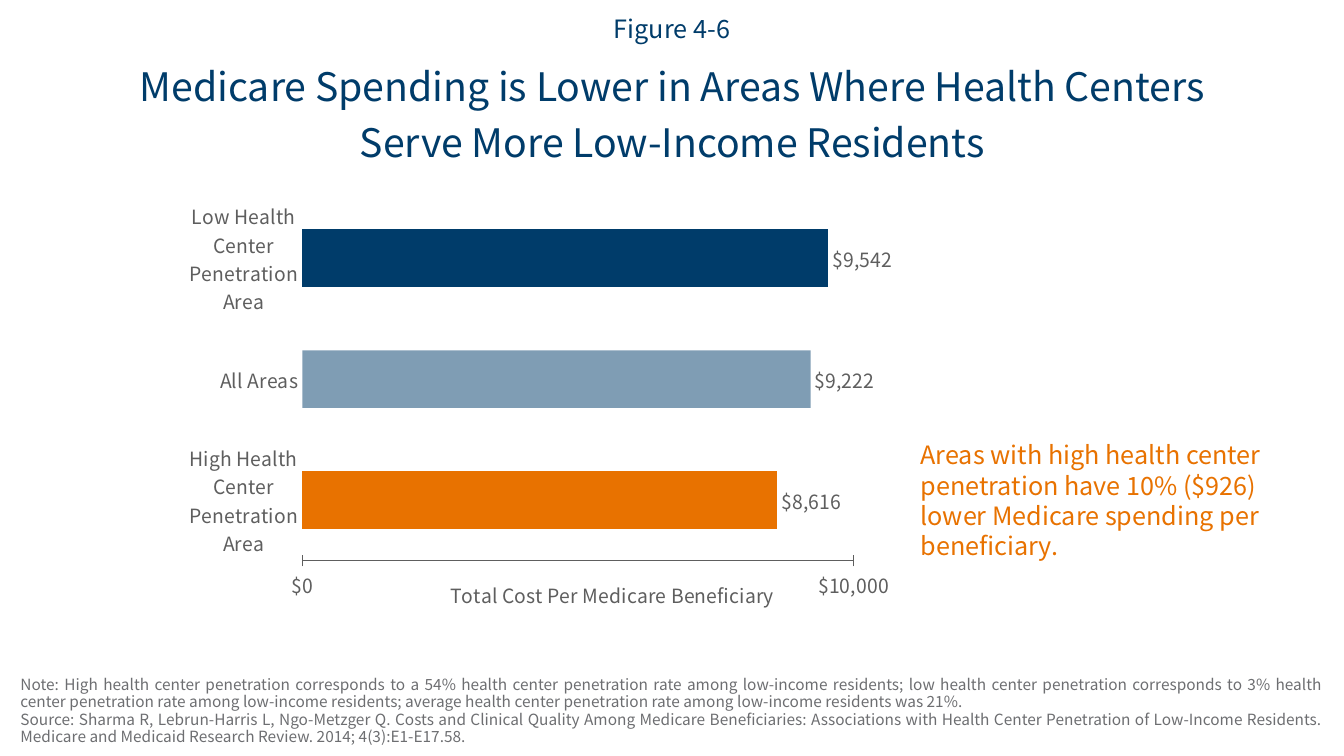
from lxml import etree
from pptx import Presentation
from pptx import util as u
from pptx.chart import data as cd
from pptx.dml import color as col
from pptx.enum import chart as ec, text as et
from pptx.oxml import ns

FACE = "Noto Sans CJK JP"
NAVY, ORANGE, GREY, NOTE = "003C6A", "E87200", "5E5E5E", "6D6E71"
MONEY = '"$"#,##0'
AREAS = [
    ("High Health Center\nPenetration Area", 8616, ORANGE),
    ("All Areas", 9222, NAVY),
    ("Low Health Center\nPenetration Area", 9542, NAVY),
]
TITLE = ["Medicare Spending is Lower in Areas Where Health Centers",
         "Serve More Low-Income Residents"]
CALL = ["Areas with high health center penetration have 10% ($926) "
        "lower Medicare spending per beneficiary."]
NOTES = [
    "Note: High health center penetration corresponds to a 54% health center "
    "penetration rate among low-income residents; low health center penetration "
    "corresponds to 3% health center penetration rate among low-income residents; "
    "average health center penetration rate among low-income residents was 21%.",
    "Source: Sharma R, Lebrun-Harris L, Ngo-Metzger Q. Costs and Clinical Quality "
    "Among Medicare Beneficiaries: Associations with Health Center Penetration of "
    "Low-Income Residents. Medicare and Medicaid Research Review. 2014; 4(3):E1-E17.58.",
]


def rgb(code):
    """Turn a hex string into a colour."""
    return col.RGBColor.from_string(code)


def put(obj, **vals):
    """Set each given attribute on an object."""
    for name, val in vals.items():
        setattr(obj, name, val)


def style(font, size, tint):
    """Give a font the slide's face with a size and colour."""
    put(font, name=FACE, size=u.Pt(size), bold=False)
    font.color.rgb = rgb(tint)


def write(slide, box, lines, size, tint, align="LEFT", anchor="TOP", lead=0.9, gap=0):
    """Place a text box with one paragraph for each line."""
    frame = slide.shapes.add_textbox(*map(u.Pt, box)).text_frame
    put(frame, word_wrap=True, vertical_anchor=getattr(et.MSO_ANCHOR, anchor))
    for i, line in enumerate(lines):
        para = frame.add_paragraph() if i else frame.paragraphs[0]
        put(para, alignment=getattr(et.PP_ALIGN, align),
            line_spacing=lead, space_before=u.Pt(gap))
        run = para.add_run()
        run.text = line
        style(run.font, size, tint)


def layout(node, before, **vals):
    """Pin a chart part at fractions of the chart area."""
    for old in node.findall(ns.qn("c:layout")):
        node.remove(old)
    lay = etree.Element(ns.qn("c:layout"))
    man = etree.SubElement(lay, ns.qn("c:manualLayout"))
    for tag, val in vals.items():
        etree.SubElement(man, ns.qn("c:" + tag)).set("val", str(val))
    node.insert(before, lay)


def costs(slide, box):
    """Draw the bar chart of cost by area."""
    data = cd.CategoryChartData(number_format=MONEY)
    data.categories = [area[0] for area in AREAS]
    data.add_series("Series 1", [area[1] for area in AREAS])
    chart = slide.shapes.add_chart(
        ec.XL_CHART_TYPE.BAR_CLUSTERED, *map(u.Pt, box), data).chart
    put(chart, has_legend=False, has_title=False)
    style(chart.font, 14, GREY)
    plot = chart.plots[0]
    put(plot, gap_width=110, vary_by_categories=False, has_data_labels=True)
    put(plot.data_labels, show_value=True, number_format=MONEY,
        number_format_is_linked=False, position=ec.XL_LABEL_POSITION.OUTSIDE_END)
    style(plot.data_labels.font, 14, GREY)
    bars = plot.series[0]
    for i, (_, _, tint) in enumerate(AREAS):
        fill = bars.points[i].format.fill
        fill.solid()
        fill.fore_color.rgb = rgb(tint)
    pale = bars.points[1].format.fill.fore_color._xFill.find(ns.qn("a:srgbClr"))
    etree.SubElement(pale, ns.qn("a:alpha")).set("val", "50000")
    marks = ec.XL_TICK_MARK
    cats, cost = chart.category_axis, chart.value_axis
    for axis, tick in ((cats, marks.NONE), (cost, marks.CROSS)):
        put(axis, major_tick_mark=tick, minor_tick_mark=marks.NONE,
            has_major_gridlines=False)
        style(axis.tick_labels.font, 14, GREY)
    cats.format.line.fill.background()
    put(cost, minimum_scale=0, maximum_scale=10000, major_unit=10000)
    put(cost.tick_labels, number_format=MONEY, number_format_is_linked=False)
    cost.format.line.width = u.Pt(0.75)
    cost.format.line.color.rgb = rgb(GREY)
    title = cost.axis_title
    title.text_frame.text = "Total Cost Per Medicare Beneficiary"
    style(title.text_frame.paragraphs[0].runs[0].font, 14, GREY)
    layout(title._element, 1, xMode="edge", yMode="edge", x=0.39, y=0.875)
    layout(chart._chartSpace.chart.plotArea, 0, layoutTarget="inner", xMode="edge",
           yMode="edge", x=0.188, y=0.034, w=0.772, h=0.811)


def main():
    """Build the slide and save it."""
    deck = Presentation()
    put(deck, slide_width=u.Pt(960), slide_height=u.Pt(540))
    slide = deck.slides.add_slide(deck.slide_layouts[6])
    write(slide, (7.5, 450, 945, 86), NOTES, 11, NOTE, "JUSTIFY", "BOTTOM", gap=1)
    write(slide, (34.5, 44.5, 891, 86), TITLE, 28, NAVY, "CENTER", gap=10)
    write(slide, (385.5, 4, 189, 35), ["Figure 4-6"], 18, NAVY, "CENTER", "MIDDLE")
    costs(slide, (120, 130.5, 517.5, 319.5))
    write(slide, (650.5, 310.5, 289, 94), CALL, 18, ORANGE, lead=1.0)
    deck.save("out.pptx")


if __name__ == "__main__":
    main()
